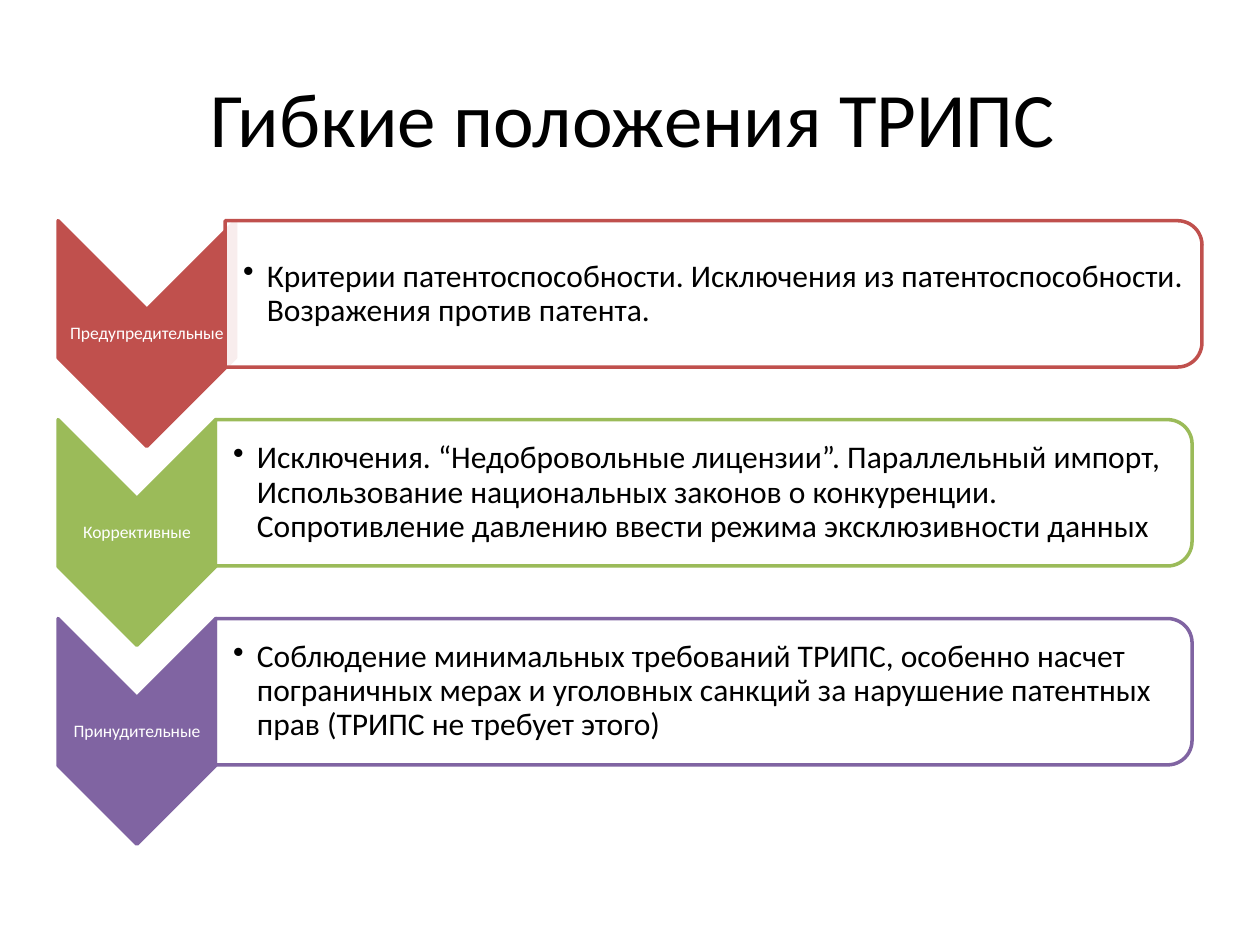
from lxml.etree import SubElement
from pptx import Presentation
from pptx.dml.color import RGBColor
from pptx.enum.shapes import MSO_SHAPE as Shape
from pptx.enum.text import MSO_ANCHOR as Anchor, PP_ALIGN as Align
from pptx.oxml.ns import qn
from pptx.util import Cm, Pt

BLACK = RGBColor(0x00, 0x00, 0x00)
WHITE = RGBColor(0xFF, 0xFF, 0xFF)
RED = RGBColor(0xC0, 0x50, 0x4D)
GREEN = RGBColor(0x9B, 0xBB, 0x59)
PURPLE = RGBColor(0x80, 0x64, 0xA2)

TITLE = "Гибкие положения ТРИПС"
# label, text, colour, chevron width, panel left (cm)
ROWS = [
    ("Предупредительные",
     "Критерии патентоспособности. Исключения из патентоспособности. "
     "Возражения против патента.", RED, 3.58, 4.54),
    ("Коррективные",
     "Исключения. “Недобровольные лицензии”. Параллельный импорт, "
     "Использование национальных законов о конкуренции. "
     "Сопротивлeние давлению ввести режима эксклюзивности данных",
     GREEN, 3.18, 4.34),
    ("Принудительные",
     "Соблюдение минимальных требований ТРИПС, особенно насчет "
     "пограничных мерах и уголовных санкций за нарушение патентных "
     "прав (ТРИПС не требует этого)", PURPLE, 3.18, 4.34),
]

# All lengths in cm
LEFT, TOP, PITCH = 1.17, 4.45, 4.01
ARROW_H = 4.55
PANEL_W, PANEL_H = 19.69, 2.95
TEXT_W, TEXT_H = 19.53, 2.67


def add_text(slide, text, x, y, w, h, size, color=BLACK, align=Align.CENTER,
             pad=0.03, inset=0.03, spacing=0.9, bullet=False):
    frame = slide.shapes.add_textbox(Cm(x), Cm(y), Cm(w), Cm(h)).text_frame
    frame.word_wrap = True
    frame.vertical_anchor = Anchor.MIDDLE
    frame.margin_left = Cm(inset)
    frame.margin_right = frame.margin_top = frame.margin_bottom = Cm(pad)
    para = frame.paragraphs[0]
    para.alignment = align
    para.line_spacing = spacing
    run = para.add_run()
    run.text = text
    run.font.name = "Calibri"
    run.font.size = Pt(size)
    run.font.color.rgb = color
    if bullet:
        props = para._p.get_or_add_pPr()
        props.set("marL", str(Cm(0.48)))
        props.set("indent", str(-Cm(0.48)))
        SubElement(props, qn("a:buChar")).set("char", "•")


def add_turned(slide, kind, x, y, w, h, fill, line):
    """Add a shape turned by 90 degrees that covers the box x, y, w, h."""
    shape = slide.shapes.add_shape(
        kind, Cm(x + (w - h) / 2), Cm(y + (h - w) / 2), Cm(h), Cm(w))
    shape.rotation = 90
    shape.shadow.inherit = False
    shape.fill.solid()
    shape.fill.fore_color.rgb = fill
    shape.line.color.rgb = line
    shape.line.width = Pt(2)
    return shape


def set_alpha(shape, percent):
    color = shape._element.spPr.find(qn("a:solidFill"))[0]
    SubElement(color, qn("a:alpha")).set("val", str(percent * 1000))


def main():
    deck = Presentation()
    deck.slide_width, deck.slide_height = Cm(25.4), Cm(19.05)
    slide = deck.slides.add_slide(deck.slide_layouts[6])
    add_text(slide, TITLE, 1.27, 0.76, 22.86, 3.18, 44,
             pad=0.13, inset=0.25, spacing=1)

    for i, (label, text, color, width, left) in enumerate(ROWS):
        top = TOP + i * PITCH
        add_turned(slide, Shape.CHEVRON, LEFT, top, width, ARROW_H,
                   color, color)
        # The label fills the part of the chevron between notch and tip
        add_text(slide, label, LEFT, top + width / 2, width,
                 ARROW_H - width, 10, WHITE)
        panel = add_turned(slide, Shape.ROUND_2_SAME_RECTANGLE, left, top,
                           PANEL_W, PANEL_H, WHITE, color)
        set_alpha(panel, 90)
        add_text(slide, text, left, top + (PANEL_H - TEXT_H) / 2, TEXT_W,
                 TEXT_H, 18, align=Align.LEFT, inset=0.36, bullet=True)

    deck.save("out.pptx")


if __name__ == "__main__":
    main()
